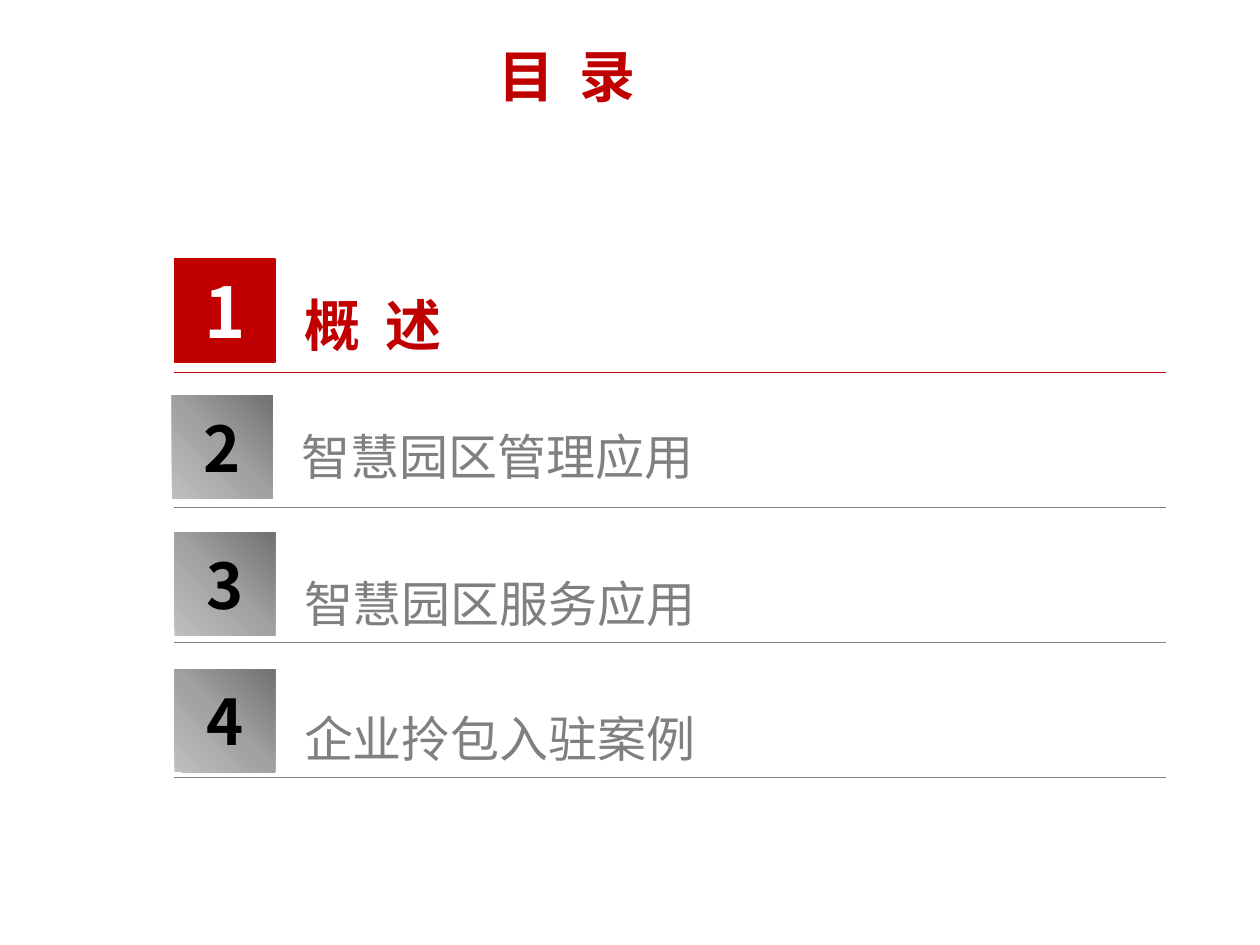
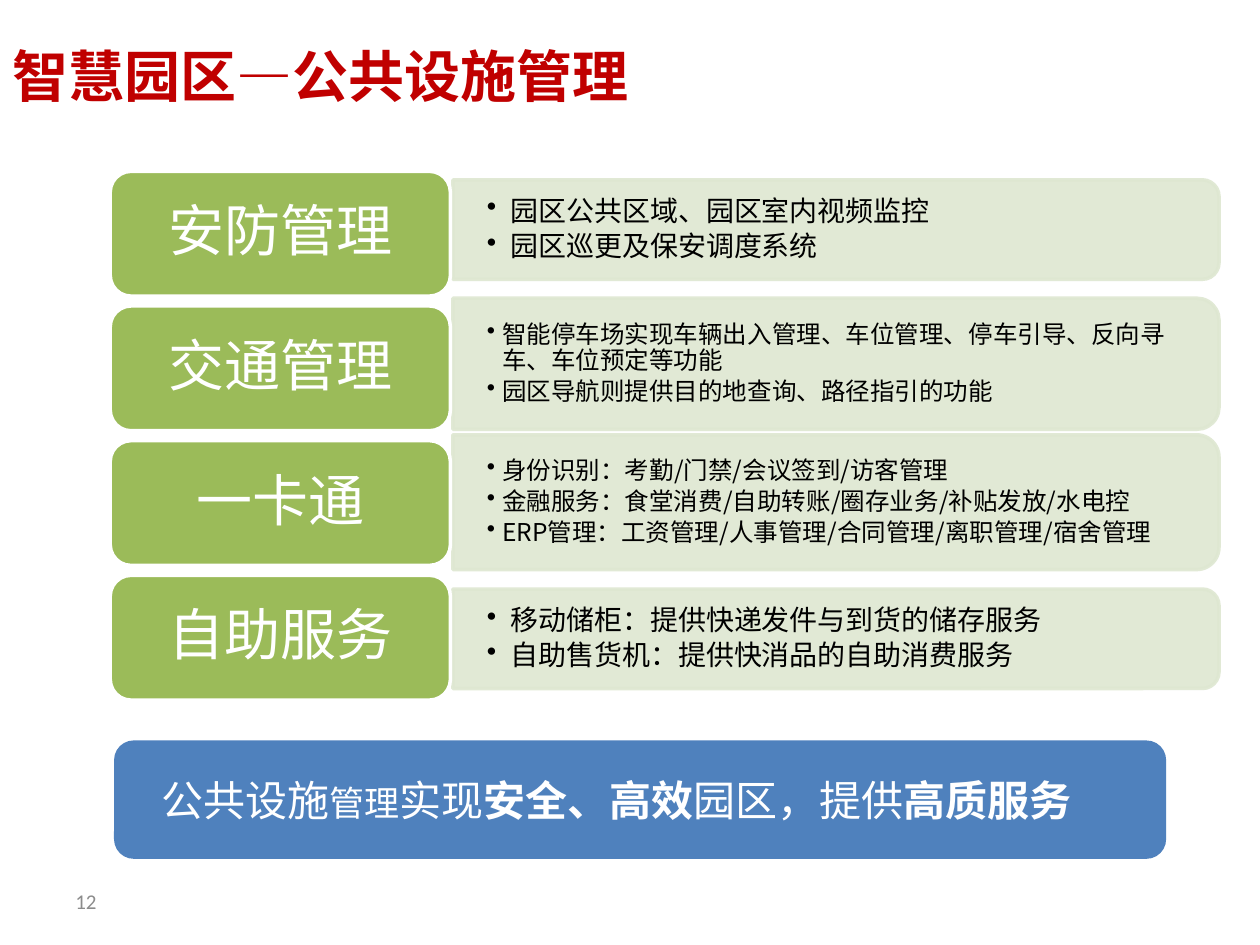
from dataclasses import dataclass

from lxml.etree import SubElement
from pptx import Presentation
from pptx.dml.color import RGBColor
from pptx.enum.shapes import MSO_CONNECTOR, MSO_SHAPE
from pptx.enum.text import MSO_ANCHOR, MSO_AUTO_SIZE, PP_ALIGN
from pptx.oxml import parse_xml
from pptx.oxml.ns import nsdecls, qn
from pptx.util import Emu, Inches, Pt


@dataclass(frozen=True)
class Theme:
    """Colours, fonts and type sizes shared by the slides."""
    red: str = "C00000"
    grey: str = "808080"
    page_grey: str = "8C8C8C"
    green: str = "9BBB59"
    pale: str = "DEE7D1"
    blue: str = "4F81BD"
    white: str = "FFFFFF"
    black: str = "000000"
    steps: tuple = ((0, "717171"), (50, "A1A1A1"), (100, "BFBFBF"))
    font: str = "Noto Sans CJK SC"
    page_font: str = "Calibri"
    title: int = 32
    active_number: int = 40
    number: int = 36
    item: int = 28
    banner: int = 24
    banner_small: int = 20
    page: int = 12


T = Theme()
WIDTH, HEIGHT = Inches(10), Inches(7.5)

AGENDA = [
    ("概 述", 0, 27.07, 10.8),
    ("智慧园区管理应用", -0.2, 41.33, 10.8),
    ("智慧园区服务应用", 0, 57.47, 9.6),
    ("企业拎包入驻案例", 0, 71.73, 9.6),
]
FACILITIES = [
    ("安防管理", 24.3, 10.53, 16, 0.19,
     ["园区公共区域、园区室内视频监控", "园区巡更及保安调度系统"]),
    ("交通管理", 38.5, 13.87, 14, 0.12,
     ["智能停车场实现车辆出入管理、车位管理、停车引导、反向寻车、车位预定等功能",
      "园区导航则提供目的地查询、路径指引的功能"]),
    ("一卡通", 53.15, 14.27, 14, 0.12,
     ["身份识别：考勤/门禁/会议签到/访客管理",
      "金融服务：食堂消费/自助转账/圈存业务/补贴发放/水电控",
      "ERP管理：工资管理/人事管理/合同管理/离职管理/宿舍管理"]),
    ("自助服务", 67.6, 10.53, 16, 0.19,
     ["移动储柜：提供快递发件与到货的储存服务", "自助售货机：提供快消品的自助消费服务"]),
]
BANNER = [
    ("公共设施", T.banner, False),
    ("管理", T.banner_small, False),
    ("实现", T.banner, False),
    ("安全、高效", T.banner, True),
    ("园区，提供", T.banner, False),
    ("高质服务", T.banner, True),
]


def place(x, y, w, h):
    """Turn percentages of the slide into a left, top, width, height box."""
    return [Emu(round(side * share / 100))
            for side, share in zip((WIDTH, HEIGHT, WIDTH, HEIGHT), (x, y, w, h))]


def add_run(p, text, size, color, bold=False, font=T.font):
    """Append one formatted run."""
    r = p.add_run()
    r.text = text
    r.font.size, r.font.bold = Pt(size), bold
    r.font.color.rgb = RGBColor.from_string(color)
    r.font.name = font
    SubElement(r._r.get_or_add_rPr(), qn("a:ea")).set("typeface", font)
    return r


def add_heading(p, text, color=T.red):
    """Write a bold heading and widen the gap between its words."""
    head, gap, tail = text.partition(" ")
    add_run(p, head, T.title, color, True)
    if gap:
        r = add_run(p, gap, T.title, color, True)
        r._r.get_or_add_rPr().set("spc", "700")
        add_run(p, tail, T.title, color, True)


def set_frame(shape, inset=(0.1, 0.05), wrap=True):
    """Centre a text frame vertically, set its insets and return it."""
    tf = shape.text_frame
    tf.word_wrap, tf.vertical_anchor = wrap, MSO_ANCHOR.MIDDLE
    tf.margin_left = tf.margin_right = Inches(inset[0])
    tf.margin_top = tf.margin_bottom = Inches(inset[1])
    return tf


def add_slide(prs, title, align=PP_ALIGN.LEFT):
    """Add a title-only slide with the red title."""
    s = prs.slides.add_slide(prs.slide_layouts[5])
    sp = s.shapes.title
    sp.left, sp.top, sp.width, sp.height = place(0, -0.4, 90, 16.67)
    tf = set_frame(sp)
    tf.auto_size = MSO_AUTO_SIZE.NONE
    p = tf.paragraphs[0]
    p.alignment = align
    add_heading(p, title)
    return s


def add_box(s, kind, box, fill, line=None, weight=2):
    """Add a flat preset shape."""
    sp = s.shapes.add_shape(kind, *box)
    sp.shadow.inherit = False
    sp.fill.solid()
    sp.fill.fore_color.rgb = RGBColor.from_string(fill)
    if line:
        sp.line.color.rgb = RGBColor.from_string(line)
        sp.line.width = Pt(weight)
    else:
        sp.line.fill.background()
    return sp


def shade(sp):
    """Fill a shape with a grey gradient that starts at its top right corner."""
    stops = "".join(f'<a:gs pos="{pos * 1000}"><a:srgbClr val="{color}"/></a:gs>'
                    for pos, color in T.steps)
    solid = sp._element.spPr.find(qn("a:solidFill"))
    solid.getparent().replace(solid, parse_xml(
        f'<a:gradFill {nsdecls("a")} rotWithShape="1"><a:gsLst>{stops}</a:gsLst>'
        '<a:path path="circle"><a:fillToRect l="100000" b="100000"/></a:path>'
        '</a:gradFill>'))


def add_rule(s, x, y, w, color):
    """Draw a thin horizontal line."""
    left, top, width, _ = place(x, y, w, 0)
    c = s.shapes.add_connector(MSO_CONNECTOR.STRAIGHT, left, top, left + width, top)
    c.line.color.rgb = RGBColor.from_string(color)
    c.line.width = Pt(0.75)
    SubElement(c._element.spPr, qn("a:effectLst"))


def add_agenda_item(s, i, label, nudge, top, height):
    """Add a numbered tile, its label and the rule below; the first is active."""
    active = i == 0
    tile = add_box(s, MSO_SHAPE.RECTANGLE, place(13.84 + nudge, 27.4 + 14.47 * i, 8, 10.93),
                   T.red, T.red if active else None, 0.75)
    if not active:
        shade(tile)
    p = set_frame(tile, (0, 0), wrap=False).paragraphs[0]
    p.alignment = PP_ALIGN.CENTER
    add_run(p, str(i + 1), T.active_number if active else T.number,
            T.white if active else T.black, True)

    tf = set_frame(s.shapes.add_textbox(*place(23.15 + nudge, top, 60.8, height)))
    tf.auto_size = MSO_AUTO_SIZE.SHAPE_TO_FIT_TEXT
    p = tf.paragraphs[0]
    p.line_spacing = 1.5
    if active:
        add_heading(p, label)
    else:
        add_run(p, label, T.item, T.grey)
    add_rule(s, 13.8, 39.45 + 14.27 * i, 78.7, T.red if active else T.grey)


def add_panel(s, mid, height):
    """Add a translucent panel, turned so its rounded end points right."""
    left, top, w, h = place(35.95, mid - height / 2, 60.8, height)
    box = left + (w - h) // 2, top + (h - w) // 2, h, w
    sp = add_box(s, MSO_SHAPE.ROUND_2_SAME_RECTANGLE, box, T.pale, T.pale)
    sp.rotation = 90
    for color in sp._element.spPr.iter(qn("a:srgbClr")):
        SubElement(color, qn("a:alpha")).set("val", "90000")


def add_bullets(s, mid, height, size, indent, lines):
    """Write a bulleted list over a panel."""
    h = height - 1.2
    tf = set_frame(s.shapes.add_textbox(*place(35.95, mid - h / 2, 59.8, h)), (0.27, 0.14))
    for n, line in enumerate(lines):
        p = tf.add_paragraph() if n else tf.paragraphs[0]
        p.level, p.line_spacing, p.space_after = 1, 0.9, Pt(round(size * 0.18, 1))
        pPr = p._p.get_or_add_pPr()
        pPr.set("marL", str(Inches(indent)))
        pPr.set("indent", str(-Inches(indent)))
        SubElement(pPr, qn("a:buChar")).set("char", "•")
        add_run(p, line, size, T.black)


def add_facility(s, i, name, mid, height, size, indent, lines):
    """Add one row: a panel with its bullets and the green name card."""
    add_panel(s, mid, height)
    add_bullets(s, mid, height, size, indent, lines)
    card = add_box(s, MSO_SHAPE.ROUNDED_RECTANGLE, place(8.75, 18.13 + 14.25 * i, 27, 13.2),
                   T.green, T.white)
    p = set_frame(card, (0.13, 0.07)).paragraphs[0]
    p.alignment, p.line_spacing = PP_ALIGN.CENTER, 0.9
    add_run(p, name, T.title, T.white)


def add_banner(s, runs):
    """Add the blue summary banner."""
    sp = add_box(s, MSO_SHAPE.ROUNDED_RECTANGLE, place(9.05, 78.35, 83.5, 12.53), T.blue)
    tf = set_frame(sp)
    tf.margin_left = Inches(0.33)
    p = tf.paragraphs[0]
    p.alignment = PP_ALIGN.LEFT
    for text, size, bold in runs:
        add_run(p, text, size, T.white, bold)


def add_page_number(s, number):
    """Write the page number at the lower left."""
    tf = set_frame(s.shapes.add_textbox(*place(5, 92.67, 23.3, 5.33)))
    add_run(tf.paragraphs[0], number, T.page, T.page_grey, font=T.page_font)


def main():
    """Build both slides and save the deck."""
    prs = Presentation()
    prs.slide_width, prs.slide_height = WIDTH, HEIGHT

    s = add_slide(prs, "目 录", PP_ALIGN.CENTER)
    for i, item in enumerate(AGENDA):
        add_agenda_item(s, i, *item)

    s = add_slide(prs, "智慧园区—公共设施管理")
    for i, row in enumerate(FACILITIES):
        add_facility(s, i, *row)
    add_banner(s, BANNER)
    add_page_number(s, "12")

    prs.save("out.pptx")


if __name__ == "__main__":
    main()
